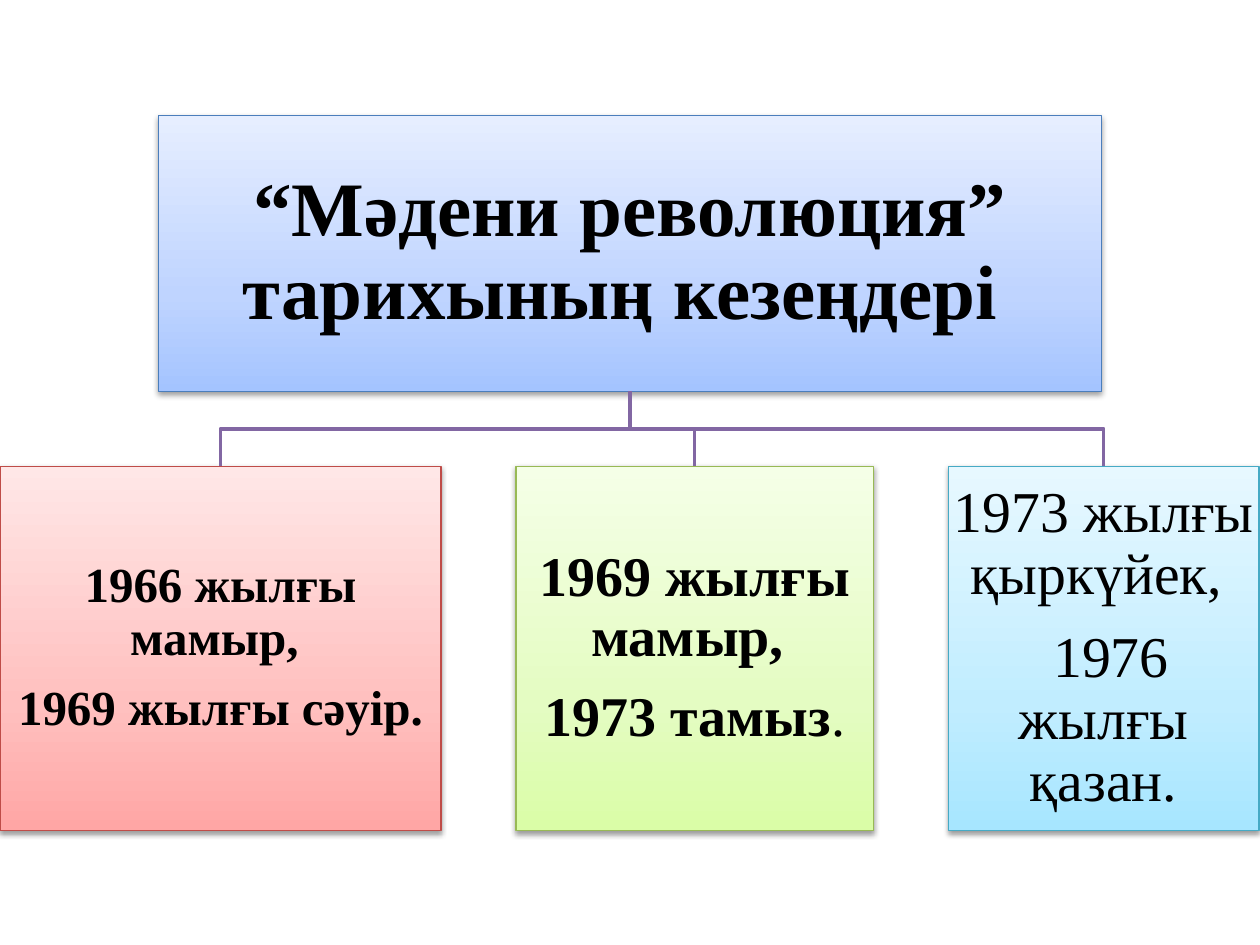
from copy import deepcopy
from dataclasses import dataclass

from lxml.etree import SubElement
from pptx import Presentation
from pptx.dml.color import RGBColor
from pptx.enum.shapes import MSO_SHAPE
from pptx.enum.text import MSO_ANCHOR, PP_ALIGN
from pptx.oxml.ns import qn
from pptx.util import Cm, Pt


@dataclass(frozen=True)
class Theme:
    font: str = "Times New Roman"
    text: str = "000000"
    link: str = "8267A3"
    # Each palette: line, then gradient stops from bottom to top
    blue: tuple = ("4B7EBC", "A4C4FF", "BFD4FF", "E6EEFF")
    red: tuple = ("BF4C48", "FFA6A5", "FFC0BF", "FFE7E7")
    green: tuple = ("98B955", "DAFDA7", "E4FCC2", "F5FFE7")
    cyan: tuple = ("46AAC5", "A7E6FF", "C1EDFF", "E7F8FF")
    title_size: int = 44
    stage_sizes: tuple = (28, 32, 33)


THEME = Theme()


def rgb(value):
    return RGBColor.from_string(value)


def add_gradient(shape, colours):
    shape.fill.gradient()
    shape.fill.gradient_angle = 90
    first = shape.fill._fill._gradFill.find(qn("a:gsLst"))[0]
    first.addnext(deepcopy(first))
    for stop, position, colour in zip(shape.fill.gradient_stops, (0, 0.35, 1), colours):
        stop.position = position
        stop.color.rgb = rgb(colour)


def add_shadow(shape):
    shape.shadow.inherit = False
    effects = shape._element.spPr.find(qn("a:effectLst"))
    shadow = SubElement(effects, qn("a:outerShdw"), blurRad=str(Pt(3.1)),
                        dist=str(Pt(1.6)), dir="5400000", rotWithShape="0")
    colour = SubElement(shadow, qn("a:srgbClr"), val="000000")
    SubElement(colour, qn("a:alpha"), val="38000")


def add_box(page, left, top, width, height, palette, lines, size, inset, bold=True):
    box = page.shapes.add_shape(MSO_SHAPE.RECTANGLE, Cm(left), Cm(top), Cm(width), Cm(height))
    line_colour, *stops = palette
    add_gradient(box, stops)
    box.line.color.rgb = rgb(line_colour)
    box.line.width = Pt(0.75)
    add_shadow(box)

    frame = box.text_frame
    frame.word_wrap = True
    frame.vertical_anchor = MSO_ANCHOR.MIDDLE
    frame.margin_left = frame.margin_right = Cm(inset)
    frame.margin_top = frame.margin_bottom = Cm(inset)
    frame.text = "\n".join(lines)
    for para in frame.paragraphs:
        para.alignment = PP_ALIGN.CENTER
        para.line_spacing = 0.9
        para.space_after = Pt(round(size * 0.35, 1))
        para.font.name = THEME.font
        para.font.size = Pt(size)
        para.font.bold = bold
        para.font.color.rgb = rgb(THEME.text)
    return box


def add_branch(page, parent, child):
    """Draw an elbow line from the parent's bottom to the child's top."""
    start_x = parent.left + parent.width // 2
    start_y = parent.top + parent.height
    end_x = child.left + child.width // 2
    middle_y = (start_y + child.top) // 2
    builder = page.shapes.build_freeform(start_x, start_y)
    builder.add_line_segments(
        [(start_x, middle_y), (end_x, middle_y), (end_x, child.top)], close=False)
    branch = builder.convert_to_shape()
    branch.fill.background()
    branch.line.color.rgb = rgb(THEME.link)
    branch.line.width = Pt(2)
    branch.shadow.inherit = False


def main():
    deck = Presentation()
    deck.slide_width, deck.slide_height = Cm(25.4), Cm(19.05)
    page = deck.slides.add_slide(deck.slide_layouts[6])

    # Heading box
    root = add_box(page, 3.2, 2.33, 19, 5.56, THEME.blue,
                   ["“Мәдени революция” тарихының кезеңдері "], THEME.title_size, 0.08)

    # Row of stages
    stages = [
        (8.89, THEME.red, ["1966 жылғы мамыр, ", "1969 жылғы сәуір."], True),
        (7.21, THEME.green, ["1969 жылғы мамыр, ", "1973 тамыз"], True),
        (6.26, THEME.cyan, ["1973 жылғы қыркүйек, ", " 1976 жылғы қазан."], False),
    ]
    left, gap = 0, 1.51
    boxes = []
    for (width, palette, lines, bold), size in zip(stages, THEME.stage_sizes):
        boxes.append(add_box(page, left, 9.4, width, 7.34, palette, lines, size, 0.05, bold))
        left += width + gap

    # The second stage ends with a full stop in regular weight
    span = boxes[1].text_frame.paragraphs[-1].add_run()
    span.text = "."
    span.font.bold = False

    # Branches from the heading to each stage
    for box in boxes:
        add_branch(page, root, box)

    deck.save("out.pptx")


if __name__ == "__main__":
    main()
